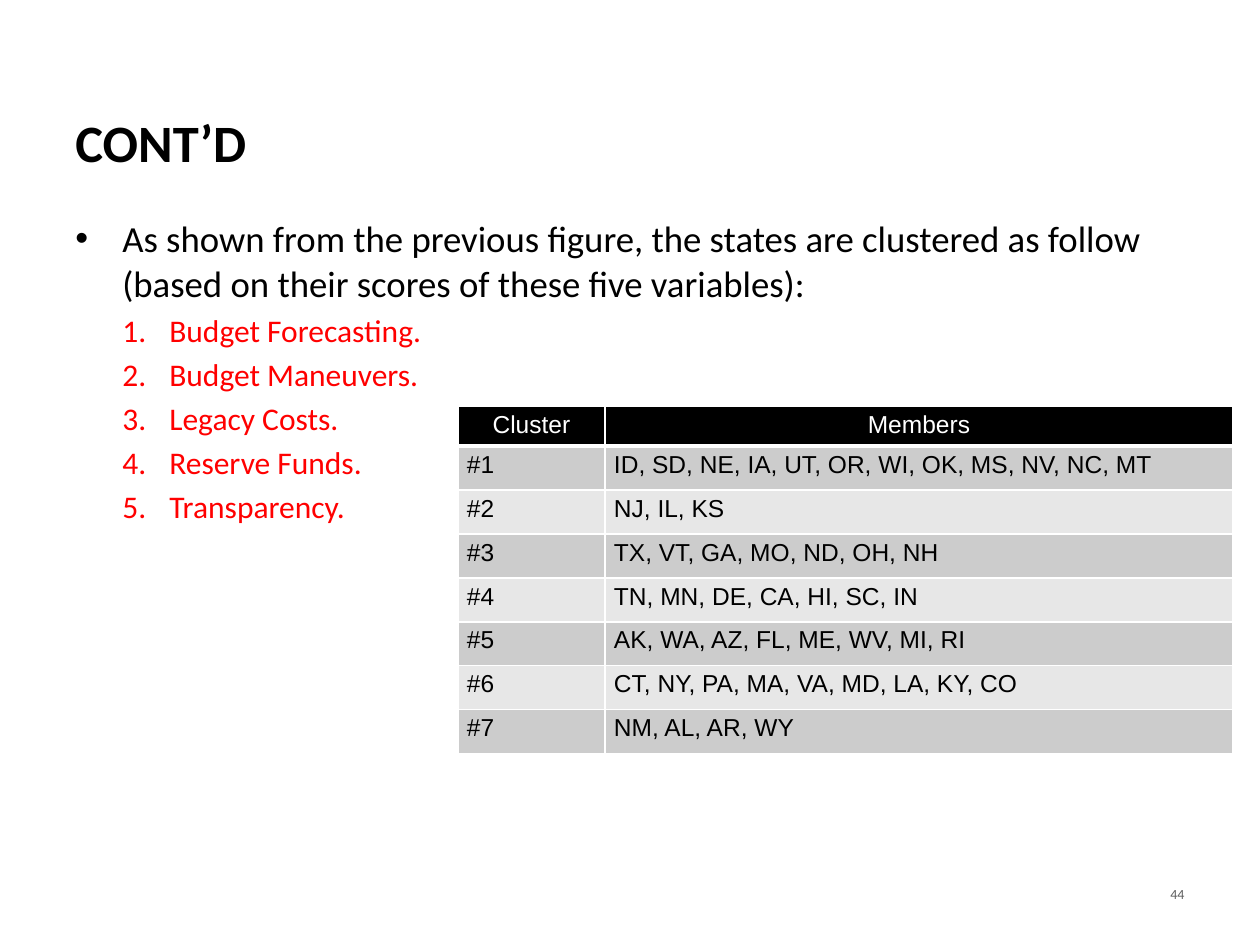
from dataclasses import dataclass

from lxml import etree
from pptx import Presentation
from pptx.dml.color import RGBColor
from pptx.enum.text import MSO_ANCHOR, PP_ALIGN
from pptx.oxml.ns import qn
from pptx.util import Emu, Pt

MIDDLE, TOP = MSO_ANCHOR.MIDDLE, MSO_ANCHOR.TOP
LEFT, CENTER, RIGHT = PP_ALIGN.LEFT, PP_ALIGN.CENTER, PP_ALIGN.RIGHT

PX_PER_INCH = 126
COLORS = {
    "black": "000000", "white": "FFFFFF", "red": "FF0000",
    "gray": "5F5F5F", "band_dark": "CCCCCC", "band_light": "E7E7E7",
}


@dataclass
class Style:
    size: int
    color: str
    font: str = "Calibri"
    bold: bool = False


@dataclass
class Box:
    x: int
    y: int
    w: int
    h: int


@dataclass
class Cluster:
    name: str
    members: str


TITLE = Style(30, "black", bold=True)
BODY = Style(21, "black")
ITEM = Style(18, "red")
PAGE = Style(8, "gray")
HEAD = Style(14, "white", "Arial")
CELL = Style(14, "black", "Arial")

VARIABLES = ["Budget Forecasting.", "Budget Maneuvers.", "Legacy Costs.",
             "Reserve Funds.", "Transparency."]
MEMBERS = [
    "ID, SD, NE, IA, UT, OR, WI, OK, MS, NV, NC, MT",
    "NJ, IL, KS",
    "TX, VT, GA, MO, ND, OH, NH",
    "TN, MN, DE, CA, HI, SC, IN",
    "AK, WA, AZ, FL, ME, WV, MI, RI",
    "CT, NY, PA, MA, VA, MD, LA, KY, CO",
    "NM, AL, AR, WY",
]
CLUSTERS = [Cluster(f"#{n}", m) for n, m in enumerate(MEMBERS, 1)]


def px(n: int) -> Emu:
    return Emu(round(n * 914400 / PX_PER_INCH))


def rgb(name: str) -> RGBColor:
    return RGBColor.from_string(COLORS[name])


def add_run(p, text: str, style: Style) -> None:
    r = p.add_run()
    r.text = text
    r.font.size = Pt(style.size)
    r.font.name = style.font
    r.font.bold = style.bold
    r.font.color.rgb = rgb(style.color)


def add_box(slide, box: Box, anchor=TOP):
    sp = slide.shapes.add_textbox(px(box.x), px(box.y), px(box.w), px(box.h))
    tf = sp.text_frame
    tf.word_wrap = True
    tf.vertical_anchor = anchor
    return tf


def add_line(slide, box: Box, text: str, style: Style, align=LEFT) -> None:
    p = add_box(slide, box, MIDDLE).paragraphs[0]
    p.alignment = align
    add_run(p, text, style)


def set_bullet(p, indent: int, hang: int, tag: str, **attrs: str) -> None:
    pPr = p._p.get_or_add_pPr()
    pPr.set("marL", str(px(indent)))
    pPr.set("indent", str(-px(hang)))
    font = etree.SubElement(pPr, qn("a:buFont"))
    font.set("typeface", "Arial" if tag == "a:buChar" else "+mj-lt")
    etree.SubElement(pPr, qn(tag), attrs)


def set_space_before(p, percent: int) -> None:
    spacing = etree.SubElement(p._p.get_or_add_pPr(), qn("a:spcBef"))
    etree.SubElement(spacing, qn("a:spcPct"), val=str(percent * 1000))


def set_borders(cell, bottom: int) -> None:
    tcPr = cell._tc.get_or_add_tcPr()
    for side, width in {"L": 1, "R": 1, "T": 1, "B": bottom}.items():
        ln = etree.SubElement(tcPr, qn(f"a:ln{side}"), w=str(Pt(width)))
        fill = etree.SubElement(ln, qn("a:solidFill"))
        etree.SubElement(fill, qn("a:srgbClr"), val=COLORS["white"])


def fill_cell(cell, text: str, style: Style, fill: str, align=LEFT, bottom: int = 1) -> None:
    set_borders(cell, bottom)
    cell.fill.solid()
    cell.fill.fore_color.rgb = rgb(fill)
    cell.margin_left = cell.margin_right = px(9)
    cell.margin_top = cell.margin_bottom = px(5)
    p = cell.text_frame.paragraphs[0]
    p.alignment = align
    add_run(p, text, style)


def add_clusters(slide, box: Box, name_w: int, head_h: int, row_h: int) -> None:
    table = slide.shapes.add_table(len(CLUSTERS) + 1, 2, px(box.x), px(box.y),
                                   px(box.w), px(box.h)).table
    table.columns[0].width = px(name_w)
    table.columns[1].width = px(box.w - name_w)
    for i, row in enumerate(table.rows):
        row.height = px(row_h if i else head_h)
    for col, label in enumerate(["Cluster", "Members"]):
        fill_cell(table.cell(0, col), label, HEAD, "black", CENTER, 3)
    for i, cluster in enumerate(CLUSTERS, 1):
        band = "band_dark" if i % 2 else "band_light"
        for col, text in enumerate([cluster.name, cluster.members]):
            fill_cell(table.cell(i, col), text, CELL, band)


def main() -> None:
    prs = Presentation()
    prs.slide_width, prs.slide_height = px(1260), px(945)
    slide = prs.slides.add_slide(prs.slide_layouts[6])

    # Title
    add_line(slide, Box(63, 86, 1134, 111), "CONT’D", TITLE)

    # Introduction and numbered variables
    tf = add_box(slide, Box(63, 210, 1134, 650))
    p = tf.paragraphs[0]
    set_bullet(p, 47, 47, "a:buChar", char="•")
    add_run(p, "As shown from the previous figure, the states are clustered as follow "
               "(based on their scores of these five variables):", BODY)
    for text in VARIABLES:
        p = tf.add_paragraph()
        p.level = 1
        set_space_before(p, 20)
        set_bullet(p, 94, 47, "a:buAutoNum", type="arabicPeriod")
        add_run(p, text, ITEM)

    # Cluster table
    add_clusters(slide, Box(458, 406, 775, 348), name_w=147, head_h=40, row_h=44)

    # Page number
    add_line(slide, Box(903, 861, 294, 65), "44", PAGE, RIGHT)

    prs.save("out.pptx")


if __name__ == "__main__":
    main()
